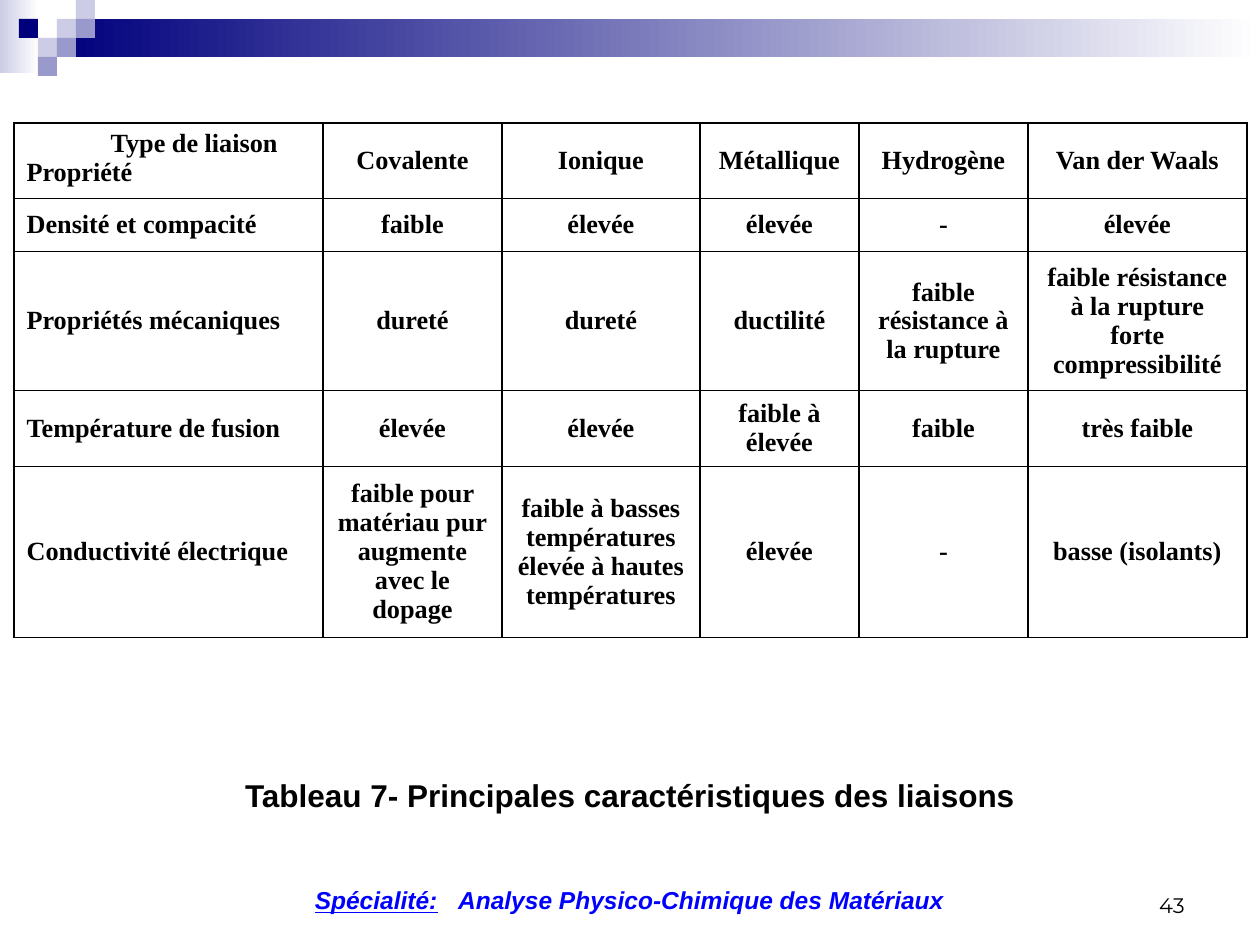
"""Build the slide comparing the main characteristics of chemical bonds."""
from dataclasses import dataclass

from lxml.etree import SubElement
from pptx import Presentation
from pptx.dml.color import RGBColor
from pptx.enum.shapes import MSO_SHAPE as Shape
from pptx.enum.text import MSO_ANCHOR as Anchor, PP_ALIGN as Align
from pptx.oxml.ns import qn
from pptx.slide import Slide
from pptx.table import _Cell as Cell
from pptx.text.text import Font
from pptx.util import Emu, Pt

EMU_PER_PX = 914400 / 126


@dataclass(frozen=True)
class Theme:
    navy: str = "00007D"
    lilac: str = "CCCCE6"
    violet: str = "9999CC"
    white: str = "FFFFFF"
    black: str = "000000"
    blue: str = "0000FF"
    serif: str = "Times New Roman"
    sans: str = "Arial"
    number_face: str = "Montserrat"
    cell_size: int = 15
    caption_size: int = 18
    footer_size: int = 14
    number_size: int = 12
    border: int = 1


@dataclass(frozen=True)
class Block:
    left: int
    top: int
    width: int
    height: int
    colour: str
    fade_to: str = ""


@dataclass(frozen=True)
class Label:
    left: int
    top: int
    width: int
    height: int
    texts: tuple[str, ...]
    face: str
    size: int
    colour: str = Theme.black
    bold: bool = True
    italic: bool = False
    align: Align = Align.CENTER
    anchor: Anchor = Anchor.TOP


THEME = Theme()
TILE = 19
TILES = (
    (3, 1, THEME.lilac), (4, 0, THEME.lilac), (4, 1, THEME.violet), (2, 2, THEME.lilac),
    (1, 1, THEME.navy), (3, 2, THEME.violet), (2, 3, THEME.violet),
)
BLOCKS = (
    Block(0, 0, 39, 73, THEME.lilac, THEME.white),
    Block(3 * TILE, TILE, 1203, 2 * TILE, THEME.navy, THEME.white),
    *(Block(column * TILE, row * TILE, TILE, TILE, colour) for column, row, colour in TILES),
)
NUMBER = Label(903, 861, 294, 63, ("43",), THEME.number_face, THEME.number_size,
               bold=False, align=Align.RIGHT, anchor=Anchor.BOTTOM)
CAPTION = Label(0, 770, 1260, 50, ("Tableau 7- Principales caractéristiques des liaisons",),
                THEME.sans, THEME.caption_size)
FOOTER = Label(2, 879, 1255, 43,
               ("Spécialité:", " ", "Analyse Physico-Chimique des Matériaux"),
               THEME.sans, THEME.footer_size, THEME.blue, italic=True)
FOOTER_GAP = 780
HEADER_INDENT = 84
TABLE_LEFT, TABLE_TOP = 14, 123
COLUMNS = (309, 179, 198, 159, 169, 219)
ROWS = (75, 53, 139, 75, 171)
CELLS = (
    ("Type de liaison\nPropriété", "Covalente", "Ionique", "Métallique", "Hydrogène",
     "Van der Waals"),
    ("Densité et compacité", "faible", "élevée", "élevée", "-", "élevée"),
    ("Propriétés mécaniques", "dureté", "dureté", "ductilité",
     "faible résistance à la rupture",
     "faible résistance à la rupture\nforte compressibilité"),
    ("Température de fusion", "élevée", "élevée", "faible à élevée", "faible", "très faible"),
    ("Conductivité électrique", "faible pour matériau pur\naugmente avec le dopage",
     "faible à basses températures\nélevée à hautes températures", "élevée", "-",
     "basse (isolants)"),
)


def px(length: int) -> Emu:
    """Turn pixels into EMU."""
    return Emu(round(length * EMU_PER_PX))


def set_font(font: Font, face: str, size: int, colour: str, bold: bool = True) -> None:
    """Apply face, size, colour and weight."""
    font.name, font.size, font.bold = face, Pt(size), bold
    font.color.rgb = RGBColor.from_string(colour)


def draw_block(page: Slide, block: Block) -> None:
    """Draw a plain or fading rectangle of the banner."""
    shape = page.shapes.add_shape(Shape.RECTANGLE, px(block.left), px(block.top),
                                  px(block.width), px(block.height))
    shape.shadow.inherit = False
    shape.line.fill.background()
    if block.fade_to:
        shape.fill.gradient()
        shape.fill.gradient_angle = 0
        for stop, colour in zip(shape.fill.gradient_stops, (block.colour, block.fade_to)):
            stop.color.rgb = RGBColor.from_string(colour)
    else:
        shape.fill.solid()
        shape.fill.fore_color.rgb = RGBColor.from_string(block.colour)


def draw_label(page: Slide, label: Label) -> None:
    """Draw a one-line label, underlining the first of several texts."""
    box = page.shapes.add_textbox(px(label.left), px(label.top),
                                  px(label.width), px(label.height))
    frame = box.text_frame
    frame.word_wrap, frame.vertical_anchor = True, label.anchor
    para = frame.paragraphs[0]
    para.alignment = label.align
    set_font(para.font, label.face, label.size, label.colour, label.bold)
    para.font.italic = label.italic
    for index, text in enumerate(label.texts):
        span = para.add_run()
        span.text = text
        set_font(span.font, label.face, label.size, label.colour, label.bold)
        span.font.italic = label.italic
        span.font.underline = index == 0 and len(label.texts) > 1
        if text == " ":
            span._r.get_or_add_rPr().set("spc", str(FOOTER_GAP))


def draw_borders(cell: Cell) -> None:
    """Rule all four sides of a cell."""
    properties = cell._tc.get_or_add_tcPr()
    for side in ("a:lnL", "a:lnR", "a:lnT", "a:lnB"):
        line = SubElement(properties, qn(side), w=str(Pt(THEME.border)))
        SubElement(SubElement(line, qn("a:solidFill")), qn("a:srgbClr"), val=THEME.black)


def fill_cell(cell: Cell, text: str, align: Align, anchor: Anchor) -> None:
    """Write and style one table cell."""
    cell.text = text
    cell.vertical_anchor = anchor
    draw_borders(cell)
    cell.fill.background()
    for para in cell.text_frame.paragraphs:
        para.alignment = align
        set_font(para.font, THEME.serif, THEME.cell_size, THEME.black)
        for span in para.runs:
            set_font(span.font, THEME.serif, THEME.cell_size, THEME.black)


def draw_table(page: Slide) -> None:
    """Draw the table of properties by bond type."""
    table = page.shapes.add_table(len(ROWS), len(COLUMNS), px(TABLE_LEFT), px(TABLE_TOP),
                                  px(sum(COLUMNS)), px(sum(ROWS))).table
    table.first_row = table.horz_banding = False
    for column, width in zip(table.columns, COLUMNS):
        column.width = px(width)
    for row, height, texts in zip(table.rows, ROWS, CELLS):
        row.height = px(height)
        for index, (cell, text) in enumerate(zip(row.cells, texts)):
            fill_cell(cell, text, Align.CENTER if index else Align.LEFT, Anchor.MIDDLE)
    corner = table.cell(0, 0)
    corner.vertical_anchor = Anchor.TOP
    first = corner.text_frame.paragraphs[0]
    first._p.get_or_add_pPr().set("marL", str(px(HEADER_INDENT)))


def main() -> None:
    """Assemble and save the deck."""
    deck = Presentation()
    deck.slide_width, deck.slide_height = px(1260), px(945)
    page = deck.slides.add_slide(deck.slide_layouts[6])
    for block in BLOCKS:
        draw_block(page, block)
    draw_label(page, NUMBER)
    draw_label(page, CAPTION)
    draw_table(page)
    draw_label(page, FOOTER)
    deck.save("out.pptx")


if __name__ == "__main__":
    main()
